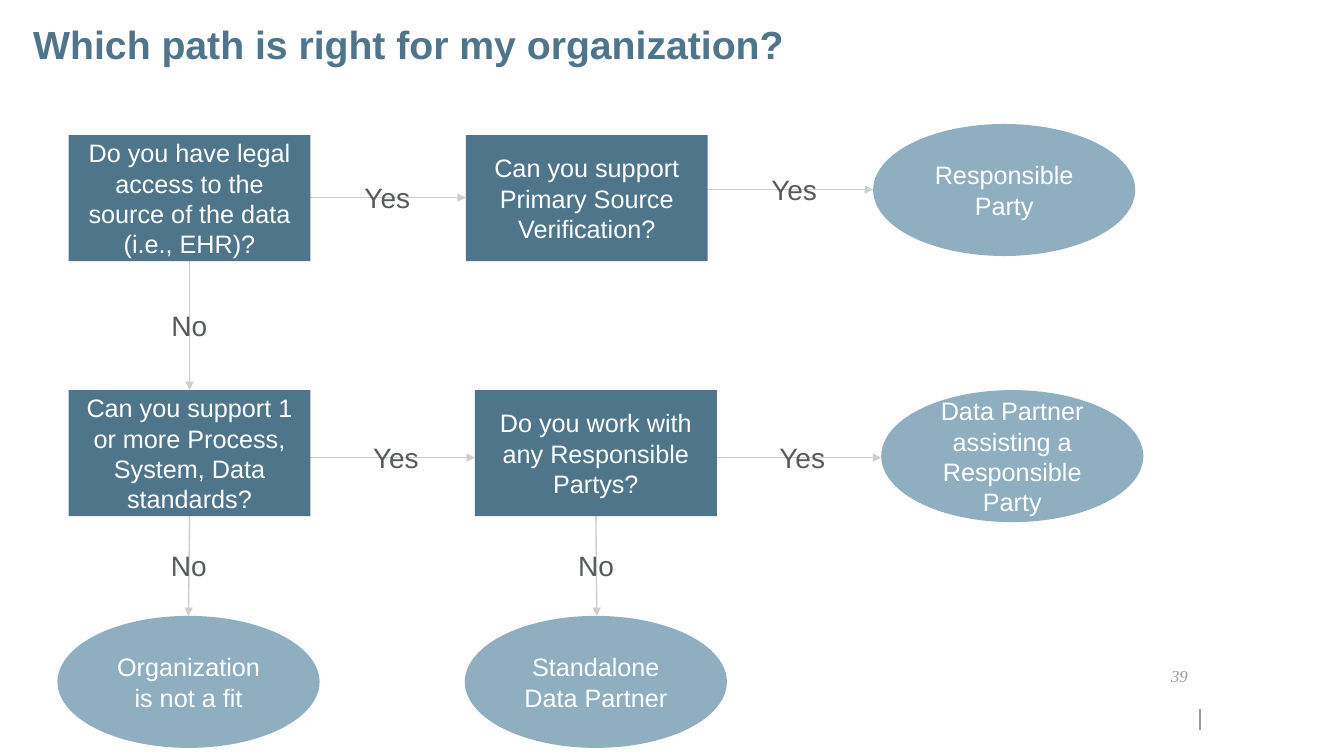
from dataclasses import dataclass

from lxml.etree import SubElement
from pptx import Presentation
from pptx.dml.color import RGBColor
from pptx.enum.shapes import MSO_CONNECTOR as Connector, MSO_SHAPE as Shape
from pptx.enum.text import MSO_ANCHOR as Anchor, PP_ALIGN as Align
from pptx.oxml.ns import qn
from pptx.util import Emu, Pt

PX = 9144  # 100 px to the inch


@dataclass(frozen=True)
class Theme:
    question: str = "4F758B"
    outcome: str = "8FAEC0"
    arrow: str = "CECFCB"
    label: str = "565A5C"
    footer: str = "989D9F"
    white: str = "FFFFFF"
    sans: str = "Arial"
    serif: str = "Times New Roman"
    title_size: int = 28
    node_size: int = 18
    label_size: int = 20
    number_size: int = 12


THEME = Theme()
QUESTION_SIZE = (240, 125)
OUTCOME_SIZE = (260, 131)
LABEL_HEIGHT = 34
LABEL_WIDTHS = {"Yes": 46, "No": 36}
LABEL_SHIFT = 4  # labels on horizontal arrows sit slightly right of the middle

QUESTIONS = [
    (68, 134, "Do you have legal access to the source of the data (i.e., EHR)?"),
    (462, 134, "Can you support Primary Source Verification?"),
    (68, 387, "Can you support 1 or more Process, System, Data standards?"),
    (471, 387, "Do you work with any Responsible Partys?"),
]
OUTCOMES = [
    (866, 123, "Responsible Party"),
    (874, 387, "Data Partner assisting a Responsible Party"),
    (57, 611, "Organization is not a fit"),
    (461, 611, "Standalone\nData Partner"),
]
ANSWERS = [
    ("Yes", (299, 196), (462, 196)),
    ("Yes", (702, 188), (866, 188)),
    ("Yes", (307, 454), (471, 454)),
    ("Yes", (710, 454), (874, 454)),
    ("No", (188, 259), (188, 387)),
    ("No", (188, 512), (187, 611)),
    ("No", (591, 512), (592, 611)),
]


def to_emu(*lengths):
    return [Emu(round(length * PX)) for length in lengths]


def write(frame, text, size, color, font=THEME.sans, align=Align.LEFT, **style):
    frame.text = text
    for paragraph in frame.paragraphs:
        paragraph.alignment = align
        for run in paragraph.runs:
            run.font.name = font
            run.font.size = Pt(size)
            run.font.color.rgb = RGBColor.from_string(color)
            run.font.bold = style.get("bold", False)
            run.font.italic = style.get("italic", False)


def add_text(slide, box, text, size, color, wrap=True, anchor=Anchor.TOP, **style):
    """Add a text box without insets and return its frame."""
    frame = slide.shapes.add_textbox(*to_emu(*box)).text_frame
    frame.margin_left = frame.margin_right = 0
    frame.margin_top = frame.margin_bottom = 0
    frame.word_wrap = wrap
    frame.vertical_anchor = anchor
    write(frame, text, size, color, **style)
    return frame


def add_node(slide, outline, size, color, left, top, text):
    node = slide.shapes.add_shape(outline, *to_emu(left, top, *size))
    node.shadow.inherit = False
    node.fill.solid()
    node.fill.fore_color.rgb = RGBColor.from_string(color)
    node.line.fill.background()
    node.text_frame.word_wrap = True
    node.text_frame.vertical_anchor = Anchor.MIDDLE
    write(node.text_frame, text, THEME.node_size, THEME.white, align=Align.CENTER)


def add_line(slide, start, end, color, arrow=False):
    line = slide.shapes.add_connector(Connector.STRAIGHT, *to_emu(*start, *end))
    line.line.color.rgb = RGBColor.from_string(color)
    line.line.width = Pt(1)
    if arrow:
        SubElement(line.line._get_or_add_ln(), qn("a:tailEnd"), type="triangle")
    SubElement(line._element.spPr, qn("a:effectLst"))


def add_answer_label(slide, answer, start, end):
    """Centre the answer on its arrow."""
    width = LABEL_WIDTHS[answer]
    shift = LABEL_SHIFT if start[1] == end[1] else 0
    left = (start[0] + end[0] - width) / 2 + shift
    top = (start[1] + end[1] - LABEL_HEIGHT) / 2
    add_text(slide, (left, top, width, LABEL_HEIGHT), answer,
             THEME.label_size, THEME.label, wrap=False)


def main():
    deck = Presentation()
    deck.slide_width, deck.slide_height = to_emu(1333, 750)
    slide = deck.slides.add_slide(deck.slide_layouts[6])

    title = add_text(slide, (33, 26, 1267, 41), "Which path is right for my organization?",
                     THEME.title_size, THEME.question, anchor=Anchor.MIDDLE, bold=True)
    title.paragraphs[0].line_spacing = 0.9

    for _, start, end in ANSWERS:
        add_line(slide, start, end, THEME.arrow, arrow=True)
    for question in QUESTIONS:
        add_node(slide, Shape.RECTANGLE, QUESTION_SIZE, THEME.question, *question)
    for outcome in OUTCOMES:
        add_node(slide, Shape.OVAL, OUTCOME_SIZE, THEME.outcome, *outcome)
    for answer in ANSWERS:
        add_answer_label(slide, *answer)

    add_text(slide, (1099, 662, 79, 18), "39", THEME.number_size, THEME.footer,
             anchor=Anchor.BOTTOM, font=THEME.serif, align=Align.RIGHT, italic=True)
    add_line(slide, (1190, 703), (1190, 724), THEME.footer)

    deck.save("out.pptx")


if __name__ == "__main__":
    main()
